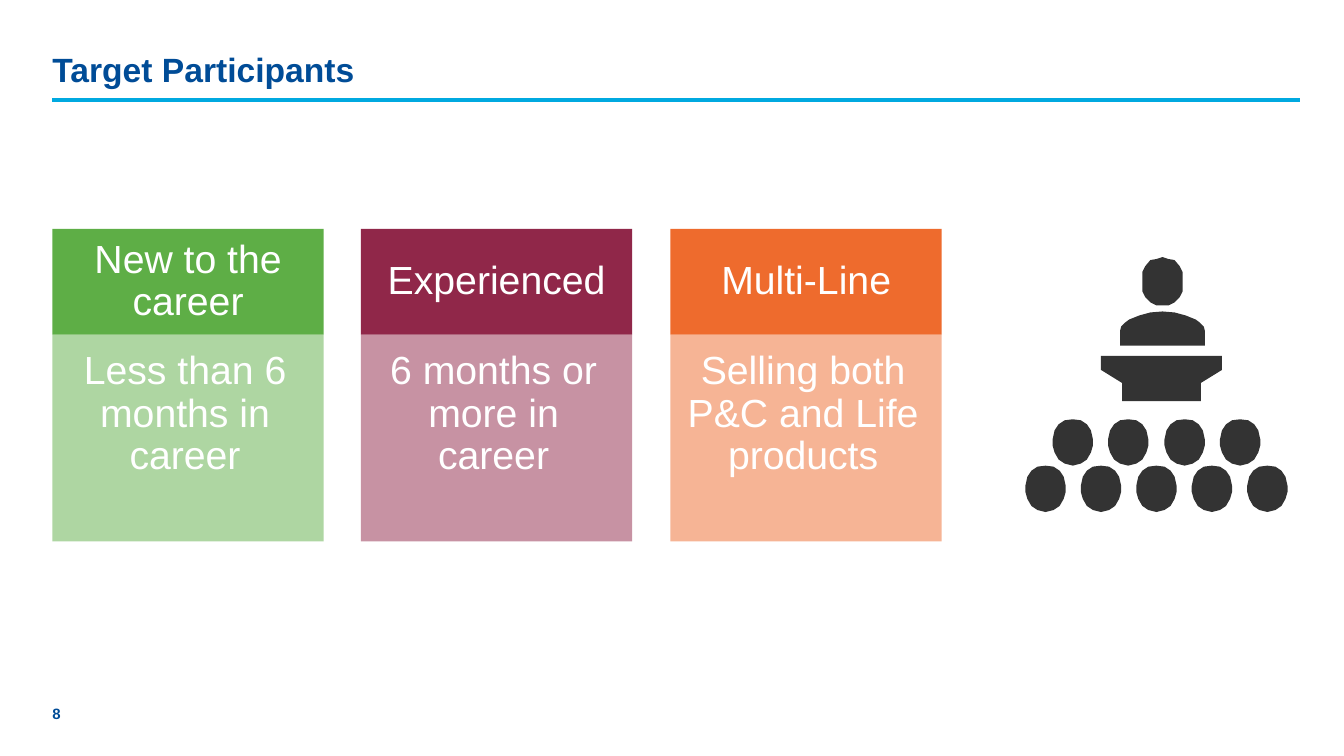
from lxml.etree import SubElement
from pptx import Presentation
from pptx.dml.color import RGBColor as RGB
from pptx.enum.shapes import MSO_CONNECTOR as Link, MSO_SHAPE as Shape
from pptx.enum.text import MSO_ANCHOR as Anchor, MSO_AUTO_SIZE as Fit, PP_ALIGN as Align
from pptx.oxml.ns import qn
from pptx.util import Pt

SCALE = 9144
FONT = "Arial"
NAVY = RGB(0x00, 0x4C, 0x97)
CYAN = RGB(0x00, 0xA9, 0xE0)
GREEN = RGB(0x5E, 0xAE, 0x46)
PLUM = RGB(0x90, 0x27, 0x49)
ORANGE = RGB(0xEE, 0x6B, 0x2D)
DARK = RGB(0x33, 0x33, 0x33)
WHITE = RGB(0xFF, 0xFF, 0xFF)

CARDS = [
    ("New to the career", "Less than 6 months in career", GREEN),
    ("Experienced", "6 months or more in career", PLUM),
    ("Multi-Line", "Selling both P&C and Life products", ORANGE),
]
FACE = [(0, 0), (6, 2), (12, 3), (17, 9), (20, 15), (20, 24),
        (20, 34), (17, 40), (12, 45), (6, 48), (0, 48)]
TORSO = [(0, 0), (12, 1), (23, 4), (28, 6), (33, 8), (37, 11),
         (41, 15), (42, 19), (42, 34)]
DESK = [(60, 0), (60, 14), (39, 27), (39, 45)]
HEAD = [(0, 0), (8, 1), (14, 5), (18, 11), (20, 20), (20, 26),
        (18, 33), (14, 40), (8, 44), (0, 46)]


def px(*nums):
    """Turn px into EMU."""
    return [num * SCALE for num in nums]


class Deck:
    """Hold the style and the current slide."""

    def __init__(self):
        """Open a wide deck with one title-only slide."""
        self.prs = Presentation()
        self.prs.slide_width, self.prs.slide_height = px(1333, 750)
        self.slide = self.prs.slides.add_slide(self.prs.slide_layouts[5])
        self.shapes = self.slide.shapes

    def letter(self, shape, text, size, color, bold=False, align=Align.LEFT,
               anchor=Anchor.BOTTOM, pad=(0, 0, 0, 0), space=1.0):
        """Put styled text in a shape."""
        frame = shape.text_frame
        frame.text = text
        frame.word_wrap = True
        frame.auto_size = Fit.NONE
        frame.vertical_anchor = anchor
        (frame.margin_left, frame.margin_top,
         frame.margin_right, frame.margin_bottom) = px(*pad)
        para = frame.paragraphs[0]
        para.alignment = align
        para.line_spacing = space
        font = para.runs[0].font
        font.name, font.size, font.bold = FONT, Pt(size), bold
        font.color.rgb = color

    def paint(self, shape, color, alpha=100):
        """Give a shape a flat fill with no line or shadow."""
        shape.shadow.inherit = False
        shape.line.fill.background()
        shape.fill.solid()
        shape.fill.fore_color.rgb = color
        if alpha < 100:
            tint = shape._element.spPr.find(".//" + qn("a:srgbClr"))
            SubElement(tint, qn("a:alpha"), val=str(alpha * 1000))

    def title(self, text, box):
        """Move and fill the title placeholder."""
        shape = self.shapes.title
        shape.left, shape.top, shape.width, shape.height = px(*box)
        self.letter(shape, text, 24, NAVY, bold=True, space=1.2)

    def label(self, text, box, size):
        """Add a small bold text box."""
        self.letter(self.shapes.add_textbox(*px(*box)), text, size, NAVY, bold=True)

    def rule(self, ends, color, width):
        """Add a straight line."""
        line = self.shapes.add_connector(Link.STRAIGHT, *px(*ends))
        line.line.color.rgb = color
        line.line.width = Pt(width)
        SubElement(line._element.spPr, qn("a:effectLst"))

    def block(self, text, box, color, alpha, anchor, pad):
        """Add a filled box with centred text."""
        shape = self.shapes.add_shape(Shape.RECTANGLE, *px(*box))
        self.paint(shape, color, alpha)
        self.letter(shape, text, 28, WHITE, align=Align.CENTER,
                    anchor=anchor, pad=pad, space=0.9)

    def card(self, left, head, body, color):
        """Add a header block above a paler body block."""
        self.block(head, (left, 227, 269, 105), color, 100,
                   Anchor.MIDDLE, (22, 12, 22, 12))
        self.block(body, (left, 332, 269, 205), color, 50,
                   Anchor.TOP, (16, 16, 22, 24))

    def mirror(self, mid, top, half):
        """Add an outline from its right half, mirrored about mid."""
        right = [(mid + x, top + y) for x, y in half]
        left = [(mid - x, top + y) for x, y in reversed(half)]
        start, *rest = right + left
        form = self.shapes.build_freeform(*start, scale=SCALE)
        form.add_line_segments(rest, close=True)
        self.paint(form.convert_to_shape(), DARK)


def main():
    """Build the slide and save it."""
    deck = Deck()
    deck.title("Target Participants", (52, 42, 1237, 47))
    deck.rule((52, 99, 1289, 99), CYAN, 2.75)
    deck.label("8", (52, 681, 36, 36), 10.7)
    for i, (head, body, color) in enumerate(CARDS):
        deck.card(52 + 613 * i // 2, head, body, color)
    deck.mirror(1153, 255, FACE)
    deck.mirror(1153, 309, TORSO)
    deck.mirror(1152, 353, DESK)
    for i in range(4):
        deck.mirror(1064 + 111 * i // 2, 416, HEAD)
    for i in range(5):
        deck.mirror(1037 + 55 * i, 462, HEAD)
    deck.prs.save("out.pptx")


if __name__ == "__main__":
    main()
